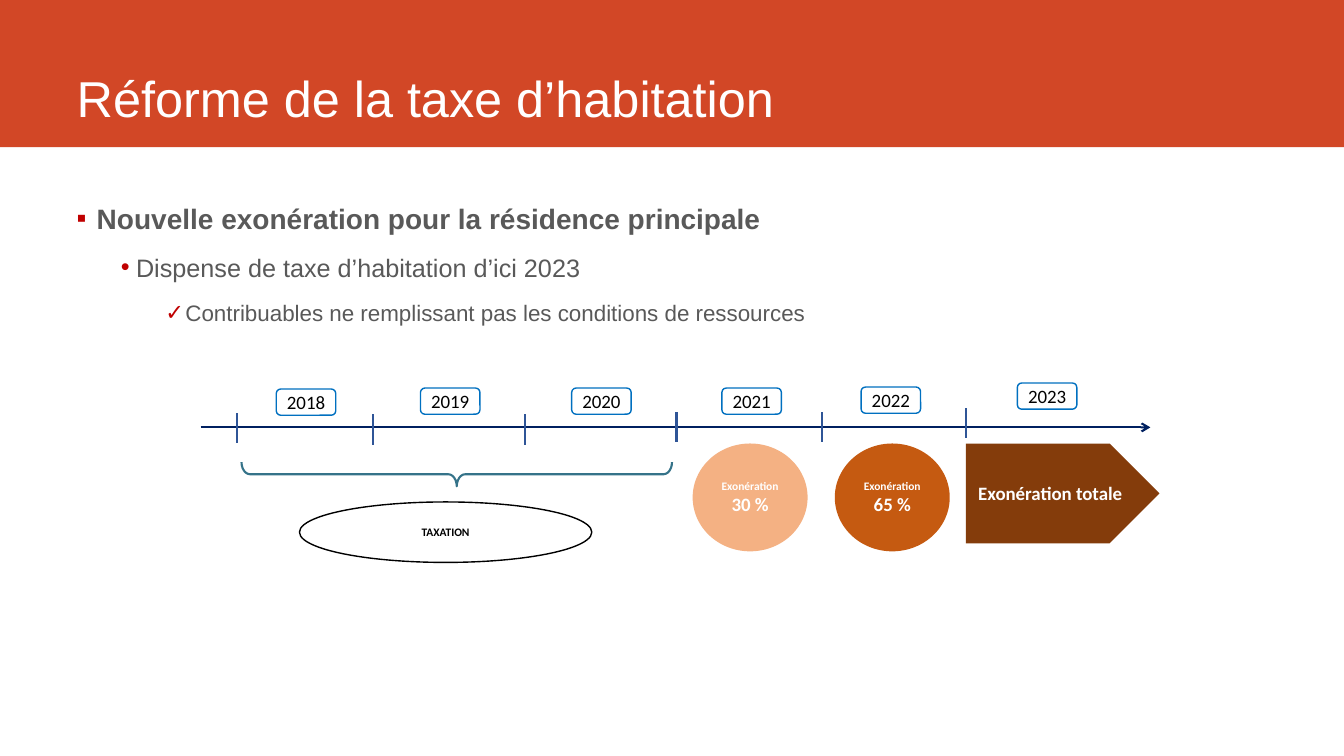
import dataclasses

import lxml.etree
import pptx
import pptx.dml.color
import pptx.enum.shapes
import pptx.enum.text
import pptx.oxml.ns
import pptx.util

RGB = pptx.dml.color.RGBColor
SHAPE = pptx.enum.shapes.MSO_SHAPE
ALIGN = pptx.enum.text.PP_ALIGN
ANCHOR = pptx.enum.text.MSO_ANCHOR

WHITE = RGB(0xFF, 0xFF, 0xFF)
BLACK = RGB(0x00, 0x00, 0x00)
BAND_RED = RGB(0xD2, 0x47, 0x26)
TEXT_GREY = RGB(0x59, 0x59, 0x59)
BULLET_RED = RGB(0xC0, 0x00, 0x00)
AXIS_NAVY = RGB(0x00, 0x20, 0x60)
TICK_BLUE = RGB(0x2F, 0x55, 0x97)
YEAR_BLUE = RGB(0x00, 0x70, 0xC0)
BRACE_TEAL = RGB(0x35, 0x73, 0x89)
LIGHT_ORANGE = RGB(0xF4, 0xB1, 0x83)
ORANGE = RGB(0xC5, 0x5A, 0x11)
BROWN = RGB(0x84, 0x3C, 0x0B)

SMALL, LARGE = 8.2, 13.5
YEAR_SIZE = (5.9, 2.6)
TICK_HEIGHT = 3
AXIS_ROW = 4.4
STAGE_ROW = 6
DISC_SIZE = (11.4, 10.7)

# year, label column, label row, tick column, tick row
YEARS = [
    ("2018", 7.5, 0.6, 3.6, 3.0),
    ("2019", 21.8, 0.5, 17.1, 3.1),
    ("2020", 36.8, 0.5, 32.2, 3.1),
    ("2021", 51.7, 0.5, 47.2, 2.9),
    ("2022", 65.5, 0.4, 61.6, 2.9),
    ("2023", 81.0, 0.0, 75.9, 2.5),
]
DISCS = [("30 %", 48.8, LIGHT_ORANGE), ("65 %", 62.9, ORANGE)]
POINTS = [
    ("Nouvelle exonération pour la résidence principale", "▪", 20, True, 0.3, 0.2),
    ("Dispense de taxe d’habitation d’ici 2023", "•", 18, False, 0.69, 0.15),
    ("Contribuables ne remplissant pas les conditions de ressources", "✓", 16, False, 1.18, 0.2),
]


@dataclasses.dataclass
class Box:
    """A region measured in grid columns and rows of a tenth of an inch."""
    left: float
    top: float
    width: float
    height: float

    def area(self, column, row, width, height):
        """Return a box placed relative to this one."""
        return Box(self.left + column, self.top + row, width, height)

    def lengths(self):
        """Return left, top, width and height as slide lengths."""
        return [pptx.util.Inches(cells / 10)
                for cells in (self.left, self.top, self.width, self.height)]


def add_run(paragraph, text, size, color, font="Arial", bold=False):
    """Add one formatted run."""
    run = paragraph.add_run()
    run.text = text
    run.font.size = pptx.util.Pt(size)
    run.font.name = font
    run.font.bold = bold
    run.font.color.rgb = color


def add_figure(slide, kind, box, fill=None, outline=None, weight=1):
    """Add a flat preset shape."""
    figure = slide.shapes.add_shape(kind, *box.lengths())
    figure.shadow.inherit = False
    if fill is None:
        figure.fill.background()
    else:
        figure.fill.solid()
        figure.fill.fore_color.rgb = fill
    if outline is None:
        figure.line.fill.background()
    else:
        figure.line.color.rgb = outline
        figure.line.width = pptx.util.Pt(weight)
    return figure


def add_label(figure, lines, color, bold=True):
    """Centre lines of (text, size) in a figure."""
    frame = figure.text_frame
    frame.word_wrap = True
    frame.vertical_anchor = ANCHOR.MIDDLE
    frame.margin_left = frame.margin_right = pptx.util.Inches(0.07)
    frame.margin_top = frame.margin_bottom = pptx.util.Inches(0.04)
    for index, (text, size) in enumerate(lines):
        paragraph = frame.add_paragraph() if index else frame.paragraphs[0]
        paragraph.alignment = ALIGN.CENTER
        add_run(paragraph, text, size, color, "Calibri", bold)


def add_rule(slide, box, color):
    """Draw a straight line across a box."""
    left, top, width, height = box.lengths()
    rule = slide.shapes.add_connector(
        pptx.enum.shapes.MSO_CONNECTOR.STRAIGHT, left, top, left + width, top + height)
    rule.line.color.rgb = color
    rule.line.width = pptx.util.Pt(1.5)
    lxml.etree.SubElement(rule._element.spPr, pptx.oxml.ns.qn("a:effectLst"))
    return rule


def add_bullet(paragraph, mark, left, hang):
    """Give a paragraph a coloured bullet and a hanging indent."""
    properties = paragraph._p.get_or_add_pPr()
    properties.set("marL", str(pptx.util.Inches(left)))
    properties.set("indent", str(pptx.util.Inches(-hang)))
    tint = lxml.etree.SubElement(properties, pptx.oxml.ns.qn("a:buClr"))
    lxml.etree.SubElement(tint, pptx.oxml.ns.qn("a:srgbClr"), val=str(BULLET_RED))
    lxml.etree.SubElement(properties, pptx.oxml.ns.qn("a:buFont"), typeface="Arial")
    lxml.etree.SubElement(properties, pptx.oxml.ns.qn("a:buChar"), char=mark)


def build_header(slide, box):
    """Place the title on its coloured band."""
    band = add_figure(slide, SHAPE.RECTANGLE, box, BAND_RED)
    slide.shapes._spTree.insert(2, band._element)
    title = slide.shapes.title
    title.left, title.top, title.width, title.height = box.area(6.6, 0, 117.6, 13.2).lengths()
    frame = title.text_frame
    frame.word_wrap = True
    frame.auto_size = pptx.enum.text.MSO_AUTO_SIZE.NONE
    frame.vertical_anchor = ANCHOR.BOTTOM
    frame.paragraphs[0].alignment = ALIGN.LEFT
    add_run(frame.paragraphs[0], "Réforme de la taxe d’habitation", 36, WHITE)


def build_points(slide, box):
    """Write the three-level list."""
    frame = slide.shapes.add_textbox(*box.lengths()).text_frame
    frame.word_wrap = True
    frame.margin_left = frame.margin_right = frame.margin_top = frame.margin_bottom = 0
    for level, (text, mark, size, bold, left, hang) in enumerate(POINTS):
        paragraph = frame.add_paragraph() if level else frame.paragraphs[0]
        paragraph.level = level
        paragraph.space_before = paragraph.space_after = pptx.util.Pt(6)
        add_bullet(paragraph, mark, left, hang)
        add_run(paragraph, text, size, TEXT_GREY, bold=bold)


def build_timeline(slide, box):
    """Draw the axis with its ticks, years and tax stages."""
    axis = add_rule(slide, box.area(0, AXIS_ROW, 94.2, 0), AXIS_NAVY)
    lxml.etree.SubElement(axis.line._get_or_add_ln(), pptx.oxml.ns.qn("a:tailEnd"), type="arrow")
    for year, column, row, tick_column, tick_row in YEARS:
        add_rule(slide, box.area(tick_column, tick_row, 0, TICK_HEIGHT), TICK_BLUE)
        label = add_figure(slide, SHAPE.ROUNDED_RECTANGLE,
                           box.area(column, row, *YEAR_SIZE), WHITE, YEAR_BLUE)
        add_label(label, [(year, LARGE)], BLACK, bold=False)

    brace = add_figure(slide, SHAPE.RIGHT_BRACE, box.area(24.2, -12.3, 2.4, 42.7),
                       outline=BRACE_TEAL, weight=1.5)
    brace.rotation = 90
    brace.adjustments[0] = 0.35
    taxation = add_figure(slide, SHAPE.OVAL, box.area(9.8, 11.8, 29, 6), WHITE, BLACK)
    add_label(taxation, [("TAXATION", SMALL)], BLACK)

    for share, column, color in DISCS:
        disc = add_figure(slide, SHAPE.OVAL, box.area(column, STAGE_ROW, *DISC_SIZE), color)
        add_label(disc, [("Exonération", SMALL), (share, LARGE)], WHITE)
    total = add_figure(slide, SHAPE.PENTAGON, box.area(75.9, STAGE_ROW, 19.2, 9.9), BROWN)
    add_label(total, [("Exonération totale", LARGE)], WHITE)


def main():
    """Build and save the slide."""
    deck = pptx.Presentation()
    page = Box(0, 0, 133.3, 75)
    deck.slide_width, deck.slide_height = page.lengths()[2:]
    slide = deck.slides.add_slide(deck.slide_layouts[5])
    build_header(slide, page.area(0, 0, page.width, 14.6))
    build_points(slide, page.area(6.6, 20, 117.6, 47.6))
    build_timeline(slide, page.area(19.9, 38, 95.2, 17.8))
    deck.save("out.pptx")


if __name__ == "__main__":
    main()
